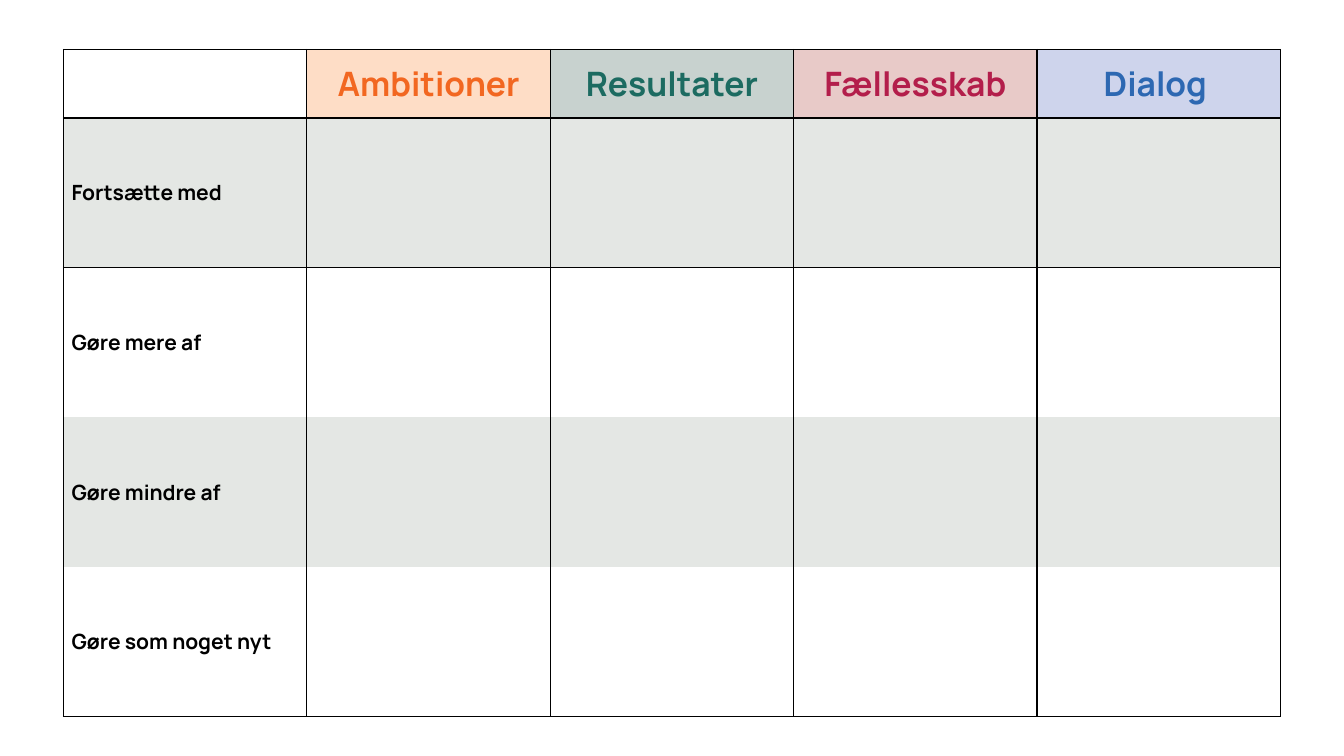
"""Build a slide with a grid for planning four values against four kinds of action."""
from lxml import etree
from pptx import Presentation
from pptx.dml.color import RGBColor
from pptx.enum.text import MSO_ANCHOR, PP_ALIGN
from pptx.oxml.ns import qn
from pptx.util import Inches, Pt

LEFT, CENTER = PP_ALIGN.LEFT, PP_ALIGN.CENTER
MIDDLE = MSO_ANCHOR.MIDDLE
BLACK, WHITE, GREY = "000000", "FFFFFF", "CFD4CF"
COL, HEAD, ROW = 2.414, 0.68, 1.485
FONT = "Manrope"


def paint(fill, color):
    fill.solid()
    fill.fore_color.rgb = RGBColor.from_string(color)


def write(cell, text, size=15, color=BLACK, align=LEFT):
    cell.vertical_anchor = MIDDLE
    cell.margin_left = cell.margin_right = Inches(0.08)
    cell.margin_top = cell.margin_bottom = Inches(0.04)
    para = cell.text_frame.paragraphs[0]
    para.alignment = align
    run = para.add_run()
    run.text = text
    run.font.name, run.font.size, run.font.bold = FONT, Pt(size), True
    paint(run.font.fill, color)


heads = [
    ("Ambitioner", "F26721", "FEDDC6"),
    ("Resultater", "1C6B61", "C8D2CF"),
    ("Fællesskab", "B31E4B", "E8CAC8"),
    ("Dialog ", "2D68B2", "CED4EC"),
]
labels = ["Fortsætte med", "Gøre mere af", "Gøre mindre af", "Gøre som noget nyt"]
cols, rows = len(heads) + 1, len(labels) + 1

prs = Presentation()
prs.slide_width, prs.slide_height = Inches(13.33), Inches(7.5)
slide = prs.slides.add_slide(prs.slide_layouts[6])
frame = slide.shapes.add_table(
    rows, cols, Inches(0.63), Inches(0.49),
    Inches(cols * COL), Inches(HEAD + len(labels) * ROW))
table = frame.table
table.first_row = table.horz_banding = False
for col in table.columns:
    col.width = Inches(COL)
for r, row in enumerate(table.rows):
    row.height = Inches(ROW if r else HEAD)

for r in range(rows):
    sides = {"L": True, "R": True, "T": r < 3, "B": r in (0, 1, rows - 1)}
    for c in range(cols):
        cell = table.cell(r, c)
        props = cell._tc.get_or_add_tcPr()
        for side, shown in sides.items():
            line = etree.SubElement(props, qn(f"a:ln{side}"), w=str(Pt(1)))
            if shown:
                solid = etree.SubElement(line, qn("a:solidFill"))
                etree.SubElement(solid, qn("a:srgbClr"), val=BLACK)
            else:
                etree.SubElement(line, qn("a:noFill"))
        if r == 0 and c:
            text, color, back = heads[c - 1]
            write(cell, text, size=24, color=color, align=CENTER)
            paint(cell.fill, back)
        elif r % 2:
            paint(cell.fill, GREY)
            tint = props.find(".//" + qn("a:srgbClr") + f"[@val='{GREY}']")
            etree.SubElement(tint, qn("a:alpha"), val="55000")
        else:
            paint(cell.fill, WHITE)
        if r and c == 0:
            write(cell, labels[r - 1])

prs.save("out.pptx")
